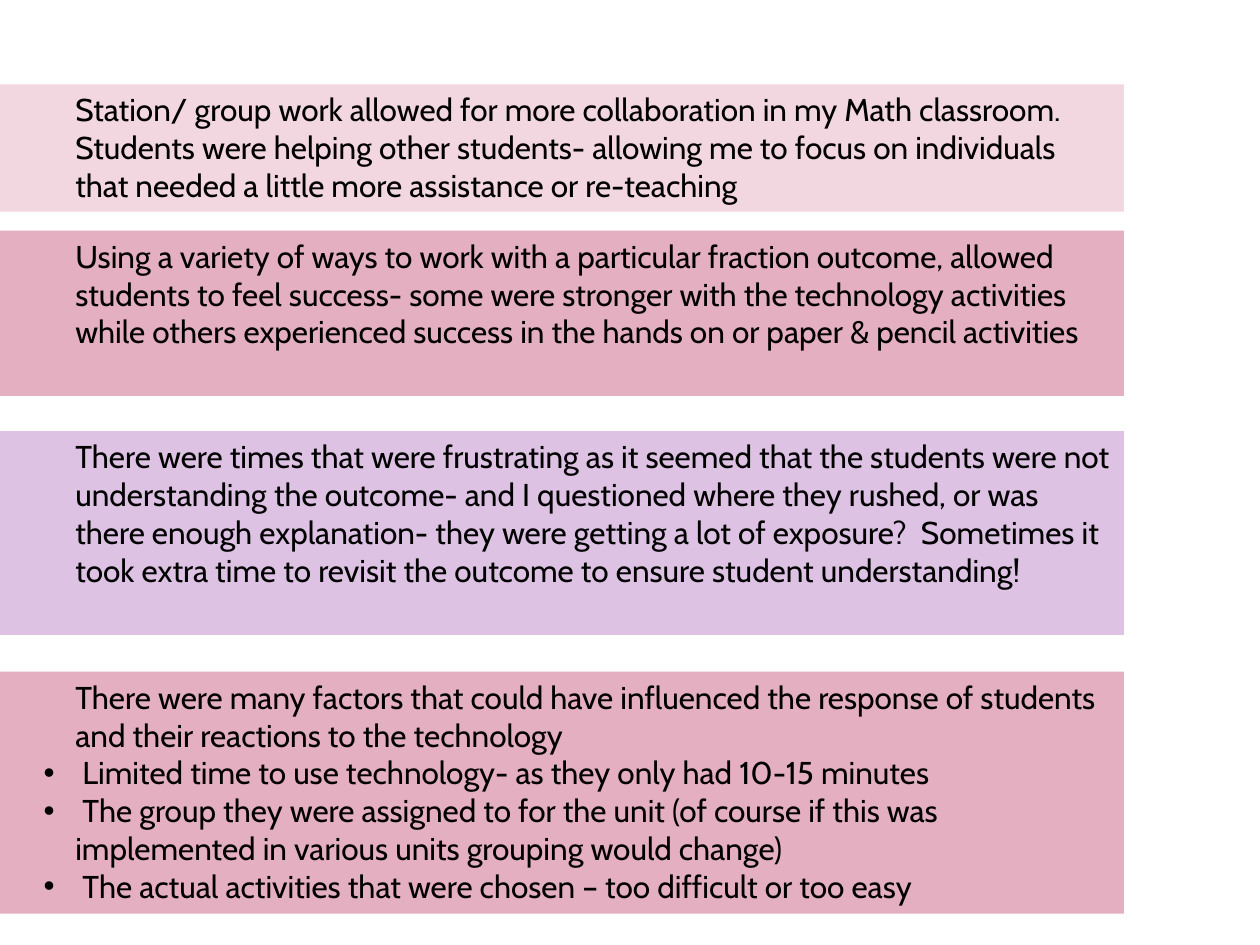
from dataclasses import dataclass

from lxml import etree
from pptx import Presentation
from pptx.dml.color import RGBColor
from pptx.enum.shapes import MSO_SHAPE
from pptx.enum.text import MSO_ANCHOR, PP_ALIGN
from pptx.oxml.ns import qn
from pptx.util import Cm, Pt

RECT = MSO_SHAPE.RECTANGLE
TOP = MSO_ANCHOR.TOP
LEFT = PP_ALIGN.LEFT


@dataclass(frozen=True)
class Theme:
    font: str = "Cabin"
    size: Pt = Pt(18)
    text: RGBColor = RGBColor(0x00, 0x00, 0x00)
    blush: RGBColor = RGBColor(0xF2, 0xD7, 0xE0)
    rose: RGBColor = RGBColor(0xE5, 0xAF, 0xC2)
    lilac: RGBColor = RGBColor(0xDE, 0xC2, 0xE4)


theme = Theme()
BAND_WIDTH = Cm(22.66)
TEXT_INDENT = Cm(1.27)
BULLET_HANG = Cm(0.64)

# top and height in cm, fill, lead paragraph, bulleted paragraphs
bands = [
    (1.7, 2.57, theme.blush,
     "Station/ group work allowed for more collaboration in my Math classroom. "
     "Students were helping other students- allowing me to focus on individuals "
     "that needed a little more assistance or re-teaching", []),
    (4.65, 3.33, theme.rose,
     "Using a variety of ways to work with a particular fraction outcome, allowed "
     "students to feel success- some were stronger with the technology activities "
     "while others experienced success in the hands on or paper & pencil activities", []),
    (8.69, 4.11, theme.lilac,
     "There were times that were frustrating as it seemed that the students were not "
     "understanding the outcome- and I questioned where they rushed, or was there "
     "enough explanation- they were getting a lot of exposure?  Sometimes it took "
     "extra time to revisit the outcome to ensure student understanding!", []),
    (13.54, 4.88, theme.rose,
     "There were many factors that could have influenced the response of students "
     "and their reactions to the technology",
     [" Limited time to use technology- as they only had 10-15 minutes",
      " The group they were assigned to for the unit (of course if this was "
      "implemented in various units grouping would change)",
      " The actual activities that were chosen – too difficult or too easy"]),
]


def add_bullet(p):
    pPr = p._p.get_or_add_pPr()
    pPr.set("indent", str(-BULLET_HANG))
    etree.SubElement(pPr, qn("a:buFont")).set("typeface", "Arial")
    etree.SubElement(pPr, qn("a:buChar")).set("char", "•")


prs = Presentation()
prs.slide_width, prs.slide_height = Cm(25.4), Cm(19.05)
s = prs.slides.add_slide(prs.slide_layouts[6])

for top, height, fill, lead, points in bands:
    sp = s.shapes.add_shape(RECT, 0, Cm(top), BAND_WIDTH, Cm(height))
    sp.shadow.inherit = False
    sp.fill.solid()
    sp.fill.fore_color.rgb = fill
    sp.line.fill.background()
    tf = sp.text_frame
    tf.word_wrap = True
    tf.vertical_anchor = TOP
    tf.text = "\n".join([lead, *points])
    for i, p in enumerate(tf.paragraphs):
        p.level = 1
        p.alignment = LEFT
        pPr = p._p.get_or_add_pPr()
        pPr.set("marL", str(TEXT_INDENT))
        pPr.set("indent", "0")
        if i > 0:
            add_bullet(p)
        for r in p.runs:
            r.font.name = theme.font
            r.font.size = theme.size
            r.font.color.rgb = theme.text

prs.save("out.pptx")
